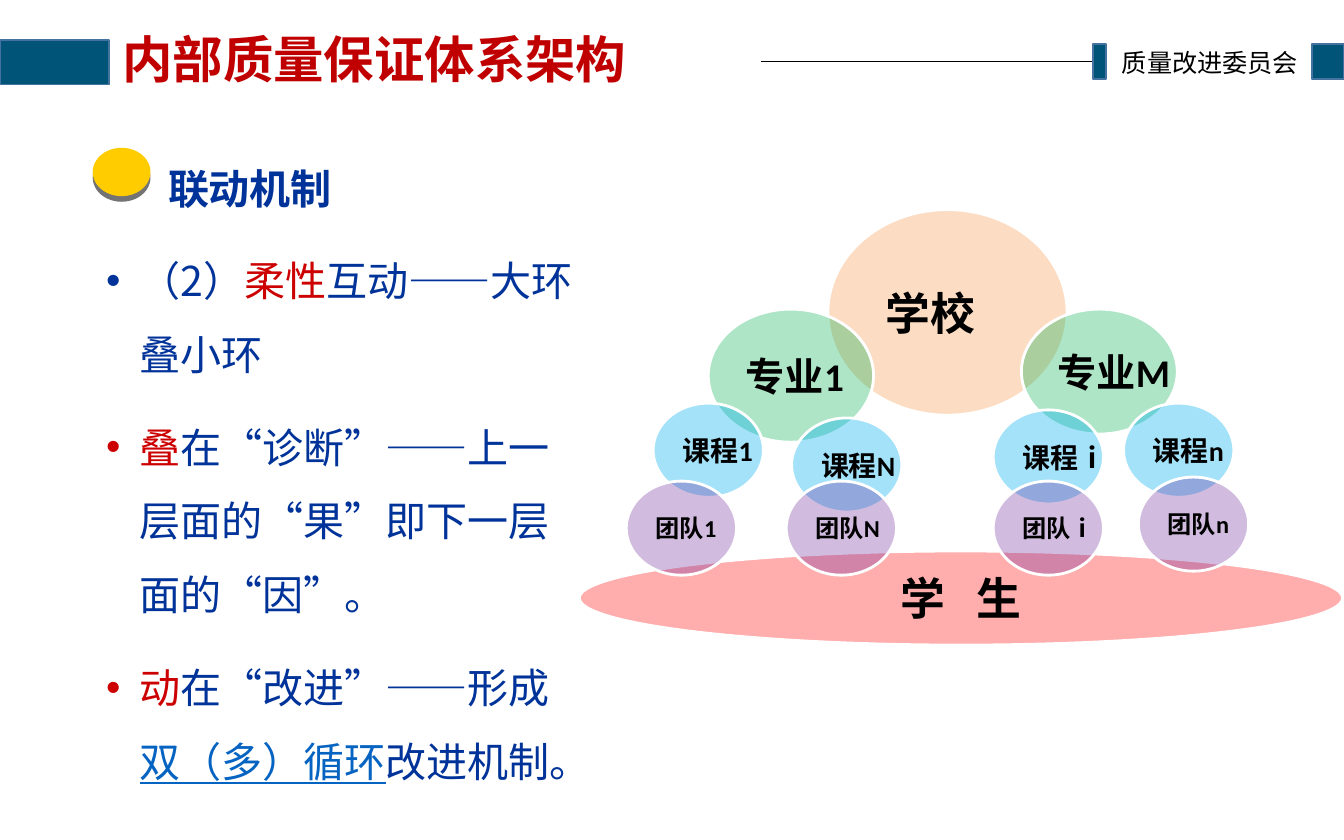
"""Build the slide on the linkage mechanism of the quality assurance system."""
from lxml import etree
from pptx import Presentation
from pptx.dml.color import RGBColor
from pptx.enum.shapes import MSO_CONNECTOR, MSO_SHAPE
from pptx.enum.text import MSO_ANCHOR, MSO_AUTO_SIZE, PP_ALIGN
from pptx.oxml.ns import qn
from pptx.util import Inches, Pt

LINE = MSO_CONNECTOR.STRAIGHT
RECTANGLE, ELLIPSE = MSO_SHAPE.RECTANGLE, MSO_SHAPE.OVAL
MIDDLE, TOP = MSO_ANCHOR.MIDDLE, MSO_ANCHOR.TOP
LEFT, CENTER = PP_ALIGN.LEFT, PP_ALIGN.CENTER
NO_AUTOFIT = MSO_AUTO_SIZE.NONE

CJK, LATIN = "Noto Sans CJK SC", "Calibri"
BLACK, WHITE = "000000", "FFFFFF"
TEAL, TEAL_EDGE = "005478", "43739E"
TITLE_RED, RED, BLUE, LINK_BLUE = "C00000", "CC0000", "003399", "0563C1"
GOLD, PINK, ORANGE = "FFCC00", "FF0000", "F79646"
GREEN, CYAN, PURPLE = "00B050", "00B0F0", "7030A0"


def color(value):
    return RGBColor.from_string(value)


class SlideBuilder:
    def __init__(self, slide):
        self.slide = slide

    def place(self, shape, left, top, width, height):
        shape.left, shape.top = Inches(left), Inches(top)
        shape.width, shape.height = Inches(width), Inches(height)

    def run(self, paragraph, text, size, fill, font=CJK, bold=False, underline=False, spacing=0):
        run = paragraph.add_run()
        run.text = text
        run.font.size, run.font.name = Pt(size), font
        run.font.bold, run.font.underline = bold, underline
        run.font.color.rgb = color(fill)
        properties = run.font._element
        etree.SubElement(properties, qn("a:ea")).set("typeface", CJK)
        if spacing:
            properties.set("spc", str(spacing * 100))

    def title(self, text, *box):
        shape = self.slide.shapes.title
        self.place(shape, *box)
        frame = shape.text_frame
        frame.auto_size, frame.vertical_anchor = NO_AUTOFIT, MIDDLE
        paragraph = frame.paragraphs[0]
        paragraph.alignment, paragraph.line_spacing = LEFT, 0.9
        self.run(paragraph, text, 27, TITLE_RED, bold=True)

    def body(self, heading, items, *box):
        shape = self.slide.placeholders[1]
        self.place(shape, *box)
        frame = shape.text_frame
        frame.auto_size, frame.vertical_anchor = NO_AUTOFIT, TOP
        first = frame.paragraphs[0]
        self.list_style(first, 0.46, 0, 0, "buNone")
        self.run(first, heading, 22, BLUE, bold=True)
        for item in items:
            paragraph = frame.add_paragraph()
            self.list_style(paragraph, 0.25, -0.25, 10, "buChar")
            for text, fill in item:
                self.run(paragraph, text, 22, fill, underline=fill == LINK_BLUE)

    def list_style(self, paragraph, margin, indent, before, bullet):
        properties = paragraph._p.get_or_add_pPr()
        properties.set("marL", str(Inches(margin)))
        properties.set("indent", str(Inches(indent)))
        mark = etree.SubElement(properties, qn(f"a:{bullet}"))
        if bullet == "buChar":
            mark.set("char", "•")
        paragraph.line_spacing, paragraph.space_before = 1.5, Pt(before)

    def shape(self, kind, fill, edge, weight, *box):
        shape = self.slide.shapes.add_shape(kind, *map(Inches, box))
        shape.shadow.inherit = False
        shape.fill.solid()
        shape.fill.fore_color.rgb = color(fill)
        if edge:
            shape.line.color.rgb = color(edge)
            shape.line.width = Pt(weight)
        else:
            shape.line.fill.background()
        return shape

    def bar(self, *box):
        self.shape(RECTANGLE, TEAL, TEAL_EDGE, 1, *box)

    def rule(self, *ends):
        line = self.slide.shapes.add_connector(LINE, *map(Inches, ends))
        line.line.color.rgb, line.line.width = color(BLACK), Pt(0.5)
        etree.SubElement(line._element.spPr, qn("a:effectLst"))

    def label(self, text, size, *box):
        frame = self.slide.shapes.add_textbox(*map(Inches, box)).text_frame
        frame.word_wrap = False
        self.run(frame.paragraphs[0], text, size, BLACK)

    def coin(self, *box):
        shape = self.shape(ELLIPSE, GOLD, None, 0, *box)
        effects = shape._element.spPr.find(qn("a:effectLst"))
        shadow = etree.SubElement(effects, qn("a:outerShdw"), blurRad="0", dist=str(Pt(3)), dir="5400000")
        shade = etree.SubElement(shadow, qn("a:srgbClr"), val=BLACK)
        etree.SubElement(shade, qn("a:alpha"), val="55000")

    def bubble(self, text, size, fill, opacity, *box, align=LEFT, margin=0.1):
        shape = self.shape(ELLIPSE, fill, WHITE, 1.5, *box)
        tint = shape._element.spPr.find(qn("a:solidFill"))[0]
        etree.SubElement(tint, qn("a:alpha")).set("val", str(opacity * 1000))
        frame = shape.text_frame
        frame.word_wrap, frame.vertical_anchor = False, MIDDLE
        frame.margin_left = Inches(margin)
        paragraph = frame.paragraphs[0]
        paragraph.alignment = align
        for part in text.partition(" "):
            if part:
                self.run(paragraph, part, size, BLACK, LATIN, True, spacing=11 if part == " " else 0)


def main():
    presentation = Presentation()
    presentation.slide_width, presentation.slide_height = Inches(10), Inches(6.25)
    builder = SlideBuilder(presentation.slides.add_slide(presentation.slide_layouts[1]))

    builder.bar(9.76, 0.33, 0.24, 0.26)
    builder.rule(8.13, 0.46, 5.66, 0.46)
    builder.bar(8.13, 0.33, 0.1, 0.26)
    builder.label("质量改进委员会", 13.5, 8.25, 0.3, 1.53, 0.33)
    builder.bar(0, 0.3, 0.81, 0.33)

    builder.title("内部质量保证体系架构", 0.81, 0.1, 4.85, 0.73)
    items = [
        [("（2）", BLUE), ("柔性", RED), ("互动——大环叠小环", BLUE)],
        [("叠", RED), ("在“诊断”——上一层面的“果”即下一层面的“因”。", BLUE)],
        [("动", RED), ("在“改进”——形成", BLUE), ("双（多）循环", LINK_BLUE), ("改进机制。", BLUE)],
    ]
    builder.body("联动机制", items, 0.69, 0.98, 3.75, 3.97)

    builder.bubble("学 生", 24, PINK, 32, 4.31, 4.1, 5.68, 0.7, align=CENTER)
    builder.bubble("学校", 24, ORANGE, 32, 6.16, 1.56, 1.78, 1.53, margin=0.17)
    builder.bubble("专业1", 21, GREEN, 32, 5.27, 2.3, 1.23, 0.99)
    builder.bubble("专业M", 21, GREEN, 32, 7.6, 2.3, 1.16, 0.93)
    tiers = [
        ("课程", 15, CYAN, 36, [(4.86, 3), (5.89, 3.11), (7.39, 3.05), (8.36, 3)]),
        ("团队", 13, PURPLE, 32, [(4.66, 3.58), (5.85, 3.58), (7.39, 3.58), (8.47, 3.55)]),
    ]
    for name, size, fill, opacity, corners in tiers:
        for suffix, (left, top) in zip("1Nⅰn", corners):
            builder.bubble(name + suffix, size, fill, opacity, left, top, 0.82, 0.7)
    builder.coin(0.69, 1.1, 0.43, 0.36)

    presentation.save("out.pptx")


if __name__ == "__main__":
    main()
